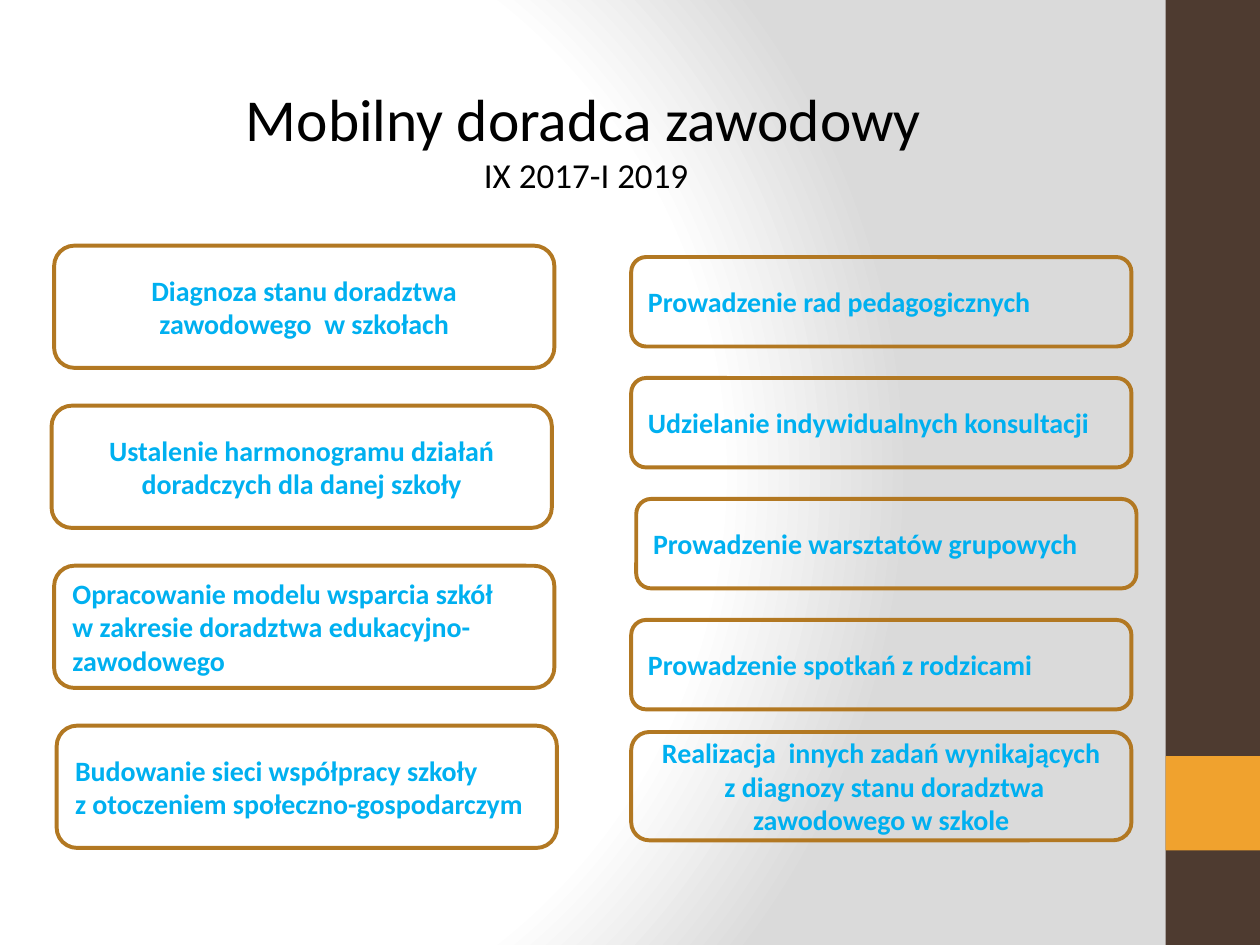
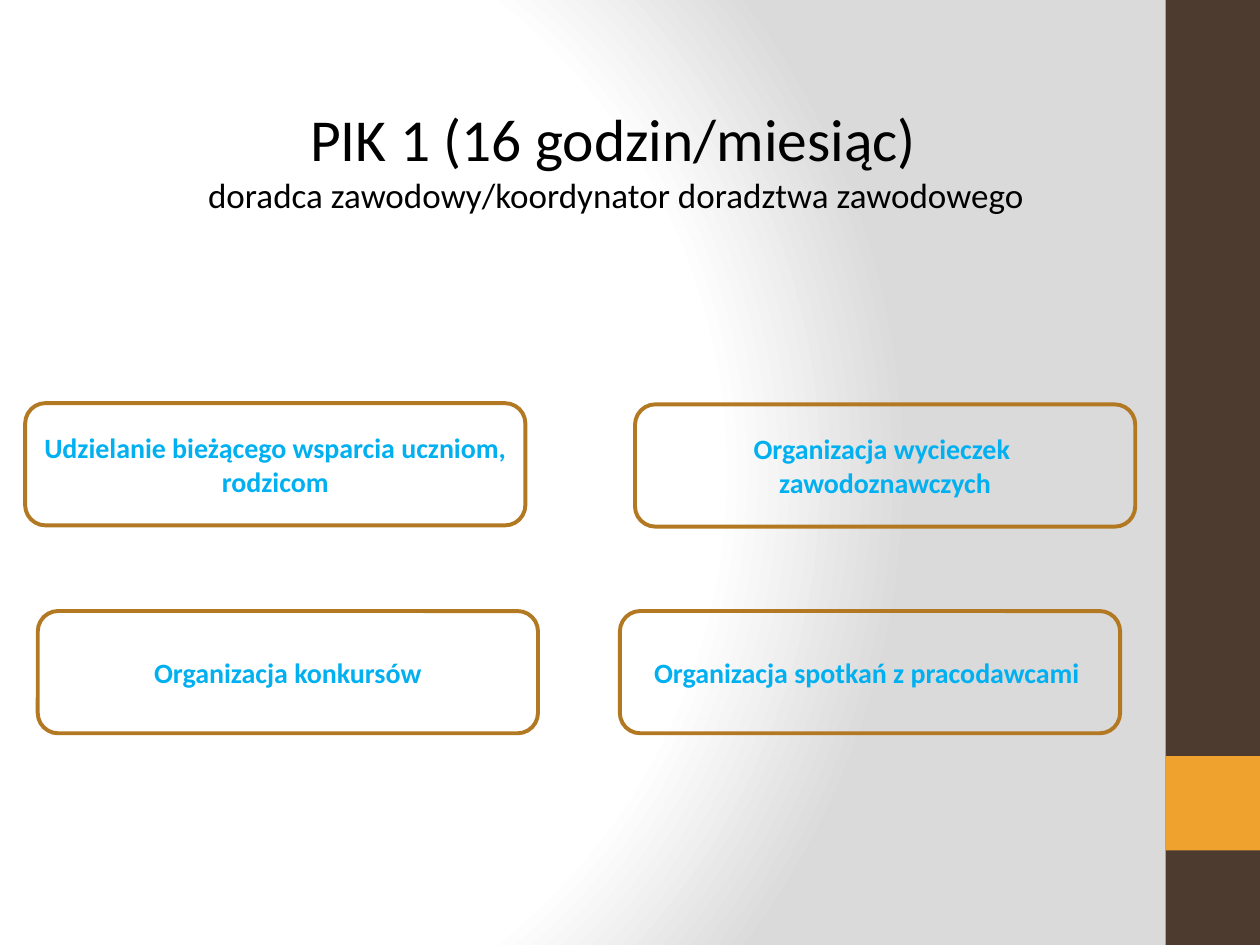
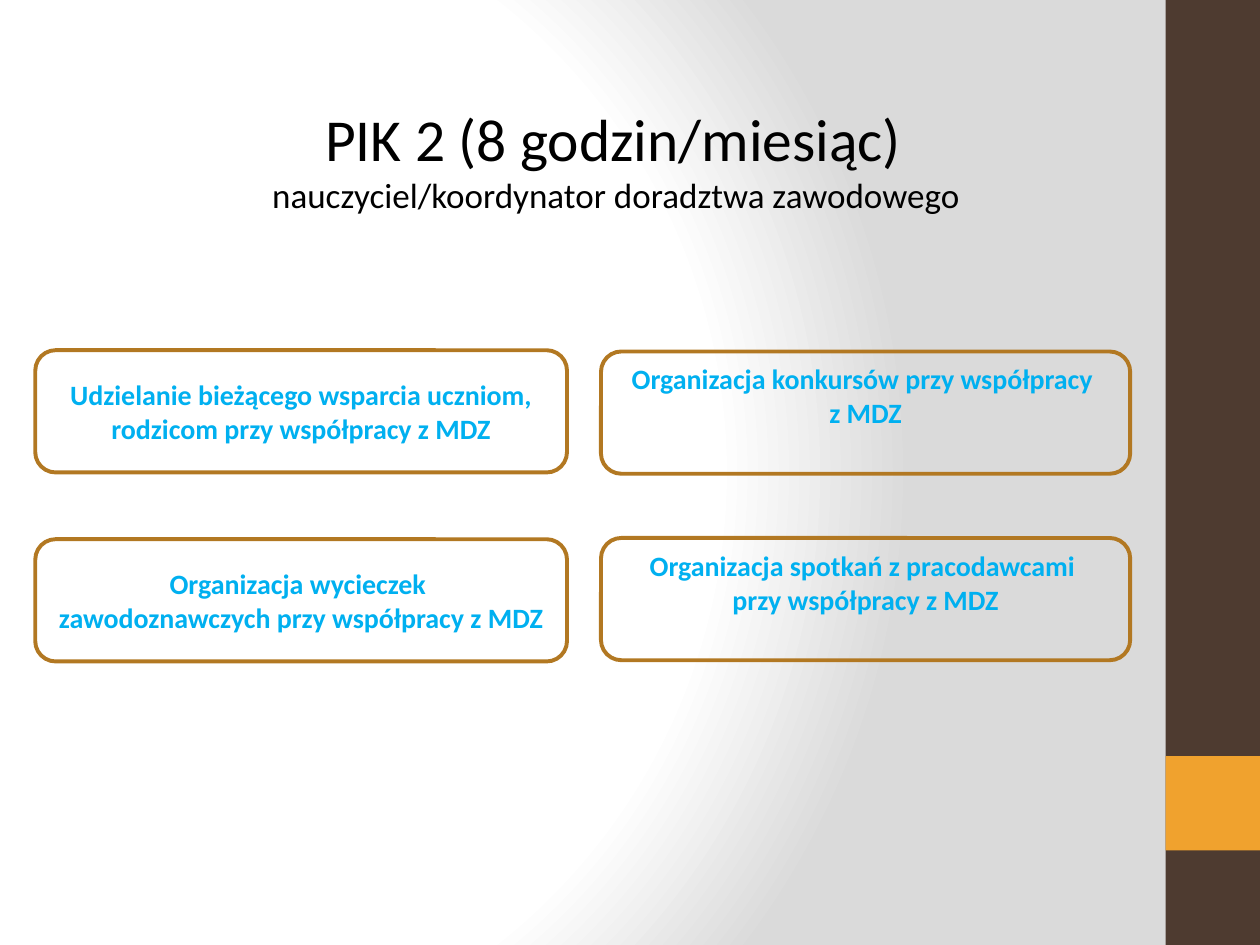
"""Builds three slides on the tasks of career advisers in schools."""
from pptx import Presentation, util as u
from pptx.dml.color import RGBColor
from pptx.enum import shapes, text
from pptx.oxml import parse_xml
from pptx.oxml.ns import nsdecls

COLOURS = {"title": "000000", "card_text": "00B0F0", "card_line": "B27822",
           "band": "4E3B30", "accent": "F0A22E", "light": "FFFFFF", "shade": "DADADA"}
FONT = "Calibri"
WIDTH, HEIGHT = 10, 7.5
BANDS = [("band", 0, HEIGHT), ("accent", 0.8 * HEIGHT, 0.1 * HEIGHT)]
BAND_WIDTH = 0.075 * WIDTH
BACKDROP_STOPS = [(0, "light"), (75, "light"), (100, "shade")]
LEFT, CENTER = text.PP_ALIGN.LEFT, text.PP_ALIGN.CENTER

# column: left, top, row pitch, card width, card height; card: wording, alignment, shift to the right
SLIDES = [
    {"title": "Mobilny doradca zawodowy ", "subtitle": "IX 2017-I 2019 ",
     "title_box": (1.46, 0.6, 6.45, 1.01),
     "columns": [
         ((0.43, 1.95, 1.27, 3.97, 0.97), [
             ("Diagnoza stanu doradztwa zawodowego  w szkołach", CENTER, 0),
             ("Ustalenie harmonogramu działań doradczych dla danej szkoły", CENTER, -0.02),
             ("Opracowanie modelu wsparcia szkół \nw zakresie doradztwa edukacyjno-zawodowego", LEFT, 0),
             ("Budowanie sieci współpracy szkoły \nz otoczeniem społeczno-gospodarczym", LEFT, 0.02)]),
         ((5.01, 2.04, 0.96, 3.97, 0.71), [
             ("Prowadzenie rad pedagogicznych", LEFT, 0),
             ("Udzielanie indywidualnych konsultacji", LEFT, 0),
             ("Prowadzenie warsztatów grupowych", LEFT, 0.04),
             ("Prowadzenie spotkań z rodzicami", LEFT, 0)]),
         ((5.01, 5.81, 0, 3.97, 0.86), [
             ("Realizacja  innych zadań wynikających\n z diagnozy stanu doradztwa zawodowego w szkole",
              CENTER, 0)])]},
    {"title": "PIK 1 (16 godzin/miesiąc) ",
     "subtitle": "doradca zawodowy/koordynator doradztwa zawodowego ",
     "title_box": (1.53, 0.76, 6.78, 1.01),
     "columns": [
         ((0.2, 3.2, 1.65, 3.97, 0.97), [
             ("Udzielanie bieżącego wsparcia uczniom, rodzicom", CENTER, 0),
             ("Organizacja konkursów", CENTER, 0.1)]),
         ((5.04, 3.21, 1.64, 3.97, 0.97), [
             ("Organizacja wycieczek \nzawodoznawczych", CENTER, 0),
             ("Organizacja spotkań z pracodawcami ", CENTER, -0.12)])]},
    {"title": "PIK 2 (8 godzin/miesiąc) ",
     "subtitle": "nauczyciel/koordynator doradztwa zawodowego ",
     "title_box": (2.04, 0.76, 5.76, 1.01),
     "columns": [
         ((0.28, 2.78, 1.5, 4.22, 0.97), [
             ("Udzielanie bieżącego wsparcia uczniom, rodzicom przy współpracy z MDZ", CENTER, 0),
             ("Organizacja wycieczek \nzawodoznawczych przy współpracy z MDZ", CENTER, 0)]),
         ((4.77, 2.79, 1.48, 4.2, 0.97), [
             ("Organizacja konkursów przy współpracy \nz MDZ", CENTER, 0),
             ("Organizacja spotkań z pracodawcami \nprzy współpracy z MDZ", CENTER, 0)])],
     "raised_column": 1},
]


def rgb(name):
    return RGBColor.from_string(COLOURS[name])


def format_font(font, size, colour, bold=False):
    for attribute, value in {"name": FONT, "size": u.Pt(size), "bold": bold}.items():
        setattr(font, attribute, value)
    font.color.rgb = rgb(colour)


def place(part, box):
    for attribute, value in zip(("left", "top", "width", "height"), box):
        setattr(part, attribute, u.Inches(value))


def add_backdrop(master):
    master.background.fill.solid()
    backdrop = master.element.cSld.bg.bgPr
    stops = "".join(f'<a:gs pos="{share * 1000}"><a:srgbClr val="{COLOURS[name]}"/></a:gs>'
                    for share, name in BACKDROP_STOPS)
    backdrop.replace(backdrop[0], parse_xml(
        f'<a:gradFill {nsdecls("a")} rotWithShape="1"><a:gsLst>{stops}</a:gsLst><a:path path="circle">'
        '<a:fillToRect l="20000" t="50000" r="100000" b="50000"/></a:path></a:gradFill>'))


def add_bands(master, slide):
    for name, top, height in BANDS:
        box = (WIDTH - BAND_WIDTH, top, BAND_WIDTH, height)
        band = slide.shapes.add_shape(shapes.MSO_SHAPE.RECTANGLE, *map(u.Inches, box))
        band.shadow.inherit = False
        band.fill.solid()
        band.fill.fore_color.rgb = rgb(name)
        band.line.fill.background()
        master.shapes.element.append(band.element)


def add_title(slide, content):
    heading = slide.shapes.title
    place(heading, content["title_box"])
    settings = {"word_wrap": False, "auto_size": text.MSO_AUTO_SIZE.NONE,
                "vertical_anchor": text.MSO_ANCHOR.TOP}
    for attribute, value in settings.items():
        setattr(heading.text_frame, attribute, value)
    paragraph = heading.text_frame.paragraphs[0]
    paragraph.alignment = CENTER
    for part, size in (("title", 34), ("subtitle", 20)):
        if part == "subtitle":
            paragraph.add_line_break()
        run = paragraph.add_run()
        run.text = content[part]
        format_font(run.font, size, "title")


def add_card(slide, box, wording, alignment, raised):
    card = slide.shapes.add_shape(shapes.MSO_SHAPE.ROUNDED_RECTANGLE, *map(u.Inches, box))
    card.shadow.inherit = False
    card.fill.background()
    card.line.color.rgb = rgb("card_line")
    card.line.width = u.Pt(2.25)
    frame = card.text_frame
    frame.vertical_anchor = text.MSO_ANCHOR.MIDDLE
    if raised:
        frame.margin_bottom = u.Inches(0.32)
    paragraph = frame.paragraphs[0]
    paragraph.text = wording
    paragraph.alignment = alignment
    for run in paragraph.runs:
        format_font(run.font, 16, "card_text", bold=True)


def main():
    deck = Presentation()
    deck.slide_width, deck.slide_height = u.Inches(WIDTH), u.Inches(HEIGHT)
    add_backdrop(deck.slide_master)
    for number, content in enumerate(SLIDES):
        slide = deck.slides.add_slide(deck.slide_layouts[5])
        if number == 0:
            add_bands(deck.slide_master, slide)
        add_title(slide, content)
        for column, ((left, top, pitch, width, height), cards) in enumerate(content["columns"]):
            raised = column == content.get("raised_column")
            for row, (wording, alignment, shift) in enumerate(cards):
                box = (left + shift, top + row * pitch, width, height)
                add_card(slide, box, wording, alignment, raised)
    deck.save("out.pptx")


if __name__ == "__main__":
    main()
